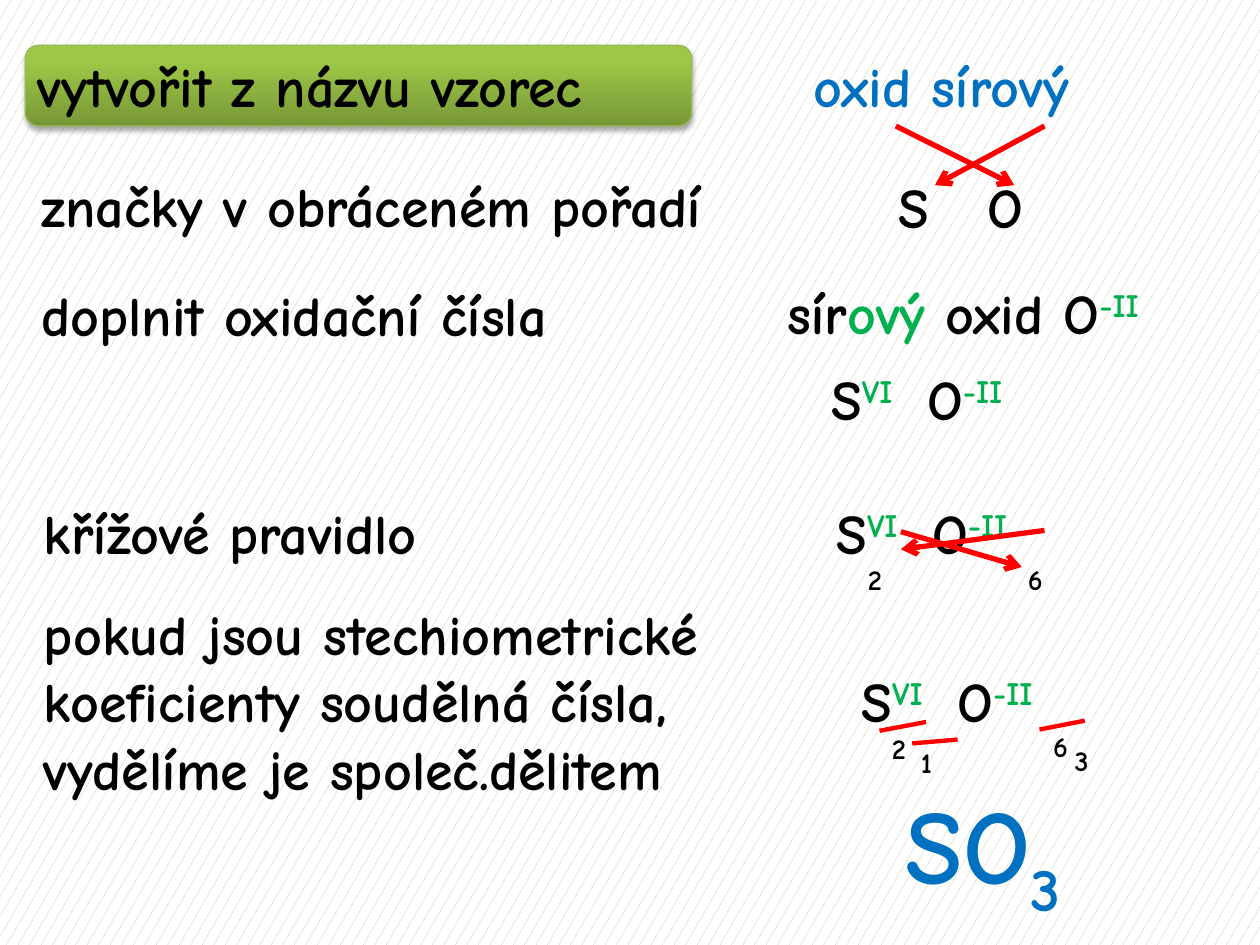
import dataclasses

import lxml.etree
import pptx
import pptx.dml.color
import pptx.enum.dml
import pptx.enum.shapes
import pptx.enum.text
import pptx.oxml.ns
import pptx.util

COLUMNS, ROWS = 100, 75
WIDTH, HEIGHT = pptx.util.Inches(10), pptx.util.Inches(7.5)
LINE_ROWS = 6.4
SUPER, SUB = 30, -25


@dataclasses.dataclass(frozen=True)
class Theme:
    font: str = "Comic Neue"
    body: int = 32
    index: int = 28
    result: int = 60
    arrow: float = 3
    strike: float = 2.5
    black: str = "000000"
    blue: str = "0070C0"
    green: str = "00B050"
    red: str = "FF0000"
    banner_dark: str = "779737"
    banner_light: str = "9DC746"
    banner_edge: str = "98B955"
    paper: str = "FFFFFF"
    confetti: str = "C4BD97"


THEME = Theme()


def rgb(value):
    return pptx.dml.color.RGBColor.from_string(value)


def x(column):
    return round(WIDTH * column / COLUMNS)


def y(row):
    return round(HEIGHT * row / ROWS)


def add_xml(parent, tag, **attributes):
    child = lxml.etree.SubElement(parent, pptx.oxml.ns.qn(tag))
    for name, value in attributes.items():
        child.set(name, str(value))
    return child


def place(sp, column, row, columns, rows):
    sp.left, sp.top, sp.width, sp.height = x(column), y(row), x(columns), y(rows)


def write(sp, paragraphs, size):
    """Fill a shape with paragraphs, each a list of (text, colour, baseline) runs."""
    tf = sp.text_frame
    tf.word_wrap = True
    tf.auto_size = pptx.enum.text.MSO_AUTO_SIZE.NONE
    tf.vertical_anchor = pptx.enum.text.MSO_ANCHOR.TOP
    for i, runs in enumerate(paragraphs):
        p = tf.add_paragraph() if i else tf.paragraphs[0]
        p.alignment = pptx.enum.text.PP_ALIGN.LEFT
        for text, color, baseline in runs:
            r = p.add_run()
            r.text = text
            r.font.name, r.font.size, r.font.bold = THEME.font, pptx.util.Pt(size), True
            r.font.color.rgb = rgb(color)
            if baseline:
                r.font._element.set("baseline", str(baseline * 1000))


def add_text(s, column, row, columns, paragraphs, size=THEME.body, rows=LINE_ROWS):
    sp = s.shapes.add_textbox(x(column), y(row), x(columns), y(rows))
    write(sp, paragraphs, size)
    return sp


def add_step(s, column, row, columns, *lines):
    add_text(s, column, row, columns, [[(line, THEME.black, 0)] for line in lines],
             rows=LINE_ROWS + 5.4 * (len(lines) - 1))


def add_symbols(s, column, row, gap, sulfur="", oxygen=""):
    """Write S and O, the O on a tab stop, with their oxidation numbers."""
    runs = [("S", THEME.black, 0), (sulfur, THEME.green, SUPER),
            ("\tO", THEME.black, 0), (oxygen, THEME.green, SUPER)]
    sp = add_text(s, column, row, 21, [[run for run in runs if run[0]]])
    tabs = add_xml(sp.text_frame.paragraphs[0]._p.get_or_add_pPr(), "a:tabLst")
    add_xml(tabs, "a:tab", pos=x(gap), algn="l")


def add_index(s, column, row, digit):
    add_text(s, column, row, 3.6, [[(digit, THEME.black, SUB)]], THEME.index, 4.2)


def add_line(s, start, end, weight, arrow=False):
    line = s.shapes.add_connector(pptx.enum.shapes.MSO_CONNECTOR.STRAIGHT,
                                  x(start[0]), y(start[1]), x(end[0]), y(end[1]))
    line.line.color.rgb = rgb(THEME.red)
    line.line.width = pptx.util.Pt(weight)
    if arrow:
        add_xml(line.line._get_or_add_ln(), "a:tailEnd", type="arrow")
    add_xml(line._element.spPr, "a:effectLst")


def add_banner_title(s, text):
    box = (2, 3.6, 52.9, LINE_ROWS)
    banner = s.shapes.add_shape(pptx.enum.shapes.MSO_SHAPE.ROUNDED_RECTANGLE, 0, 0, 0, 0)
    place(banner, *box)
    banner.fill.gradient()
    banner.fill.gradient_angle = 90
    dark, light = banner.fill.gradient_stops
    dark.color.rgb, light.color.rgb = rgb(THEME.banner_dark), rgb(THEME.banner_light)
    dark.position, light.position = 0, 0.8
    banner.line.color.rgb = rgb(THEME.banner_edge)
    banner.line.width = pptx.util.Pt(0.75)
    banner.shadow.inherit = False
    effects = banner._element.spPr.find(pptx.oxml.ns.qn("a:effectLst"))
    shadow = add_xml(effects, "a:outerShdw", blurRad=pptx.util.Pt(3.1),
                     dist=pptx.util.Pt(1.8), dir=90 * 60000, rotWithShape=0)
    color = add_xml(shadow, "a:srgbClr", val=THEME.black)
    add_xml(color, "a:alpha", val=35000)

    title = s.shapes.title
    place(title, *box)
    write(title, [[(text, THEME.black, 0)]], THEME.body)
    banner._element.addnext(title._element)


def paint_background(s):
    fill = s.background.fill
    fill.patterned()
    fill.pattern = pptx.enum.dml.MSO_PATTERN.SMALL_CONFETTI
    fill.fore_color.rgb, fill.back_color.rgb = rgb(THEME.confetti), rgb(THEME.paper)


def main():
    prs = pptx.Presentation()
    prs.slide_width, prs.slide_height = WIDTH, HEIGHT
    s = prs.slides.add_slide(prs.slide_layouts[5])
    paint_background(s)

    add_banner_title(s, "vytvořit z názvu vzorec")
    add_step(s, 2.3, 13.1, 60.7, "značky v obráceném pořadí")
    add_step(s, 2.3, 21.8, 47.1, "doplnit oxidační čísla")
    add_step(s, 2.5, 39.1, 36, "křížové pravidlo")
    add_step(s, 2.5, 47.1, 60.9, "pokud jsou stechiometrické",
             "koeficienty soudělná čísla,", "vydělíme je společ.dělitem")

    add_text(s, 63.6, 3.6, 25.5, [[("oxid sírový", THEME.blue, 0)]])
    add_text(s, 61.5, 21.6, 36.1, [[
        ("sír", THEME.black, 0), ("ový", THEME.green, 0),
        (" oxid O", THEME.black, 0), ("-II", THEME.green, SUPER)]])

    add_symbols(s, 70.3, 13.2, 7.1)
    for column, row in ((65, 28.4), (65.4, 39.1), (67.4, 52.4)):
        add_symbols(s, column, row, 7.6, "VI", "-II")

    for start, end in (((71.1, 10), (80.5, 14.7)), ((82.9, 10), (74.2, 14.7)),
                       ((82.9, 42.1), (71.5, 43.6)), ((71.5, 42.2), (81.1, 45))):
        add_line(s, start, end, THEME.arrow, arrow=True)
    for column, row, digit in ((67.9, 41.5, "2"), (80.6, 41.5, "6"),
                               (69.8, 54.9, "2"), (82.6, 54.8, "6"),
                               (84.3, 55.9, "3"), (72.1, 56, "1")):
        add_index(s, column, row, digit)
    for start, end in (((69.8, 58), (73.5, 57.3)), ((72.4, 59), (76, 58.7)),
                       ((82.5, 57.9), (86.1, 57.2))):
        add_line(s, start, end, THEME.strike)

    add_text(s, 70.9, 61.4, 18, [[("SO", THEME.blue, 0), ("3", THEME.blue, SUB)]],
             THEME.result, 11.1)
    prs.save("out.pptx")


if __name__ == "__main__":
    main()
